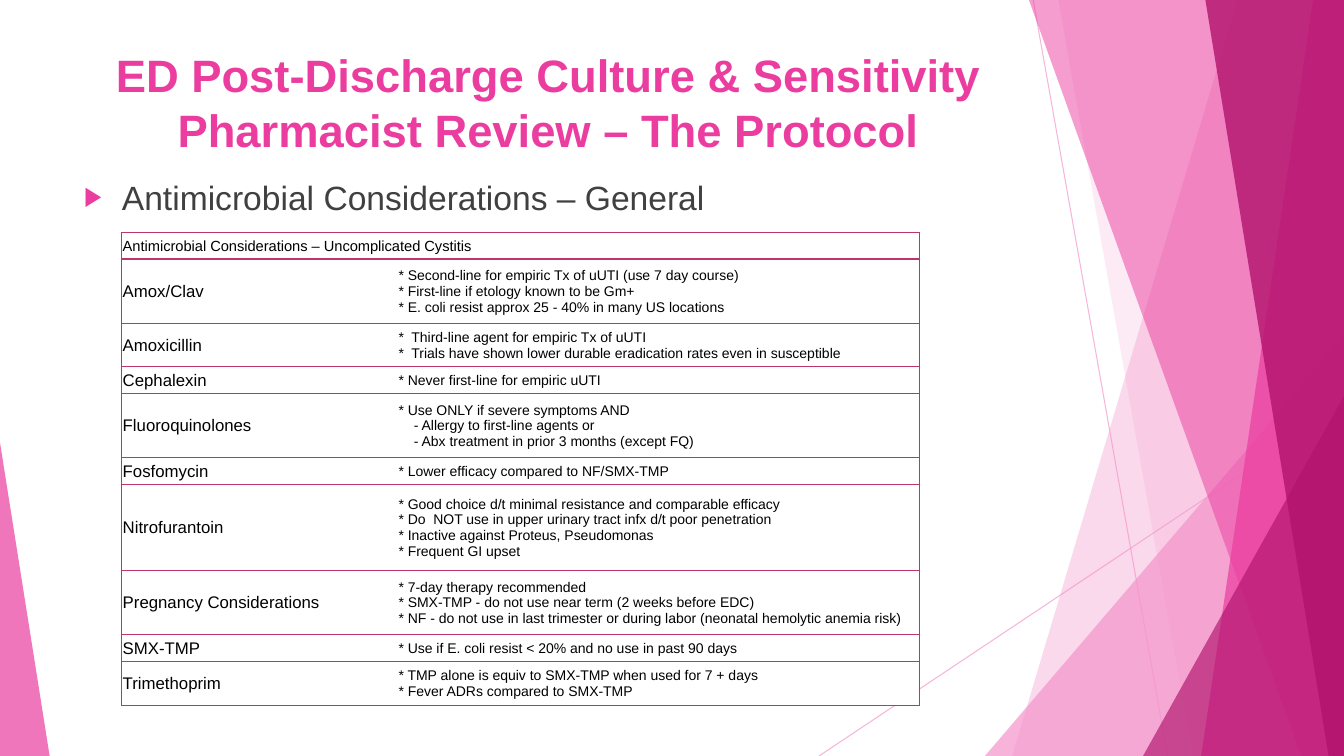
import pptx
import pptx.dml.color
import pptx.enum.shapes
import pptx.enum.text
import pptx.oxml
import pptx.oxml.ns
import pptx.util
import lxml.etree

Pt = pptx.util.Pt
qn = pptx.oxml.ns.qn
SubElement = lxml.etree.SubElement
SHAPE = pptx.enum.shapes.MSO_SHAPE
ANCHOR = pptx.enum.text.MSO_ANCHOR
WIDTH, HEIGHT = 960, 540
PINK, LIGHT, DEEP, RULE = "EB3D9F", "F496CB", "B2136D", "BC356F"

TABLE_TITLE = "Antimicrobial Considerations – Uncomplicated Cystitis"
DRUGS = [
    ("Amox/Clav", 46, ["* Second-line for empiric Tx of uUTI (use 7 day course)",
                       "* First-line if etology known to be Gm+",
                       "* E. coli resist approx 25 - 40% in many US locations"]),
    ("Amoxicillin", 31, ["*  Third-line agent for empiric Tx of uUTI",
                         "*  Trials have shown lower durable eradication rates even in susceptible"]),
    ("Cephalexin", 19, ["* Never first-line for empiric uUTI"]),
    ("Fluoroquinolones", 46, ["* Use ONLY if severe symptoms AND",
                              "- Allergy to first-line agents or",
                              "- Abx treatment in prior 3 months (except FQ)"]),
    ("Fosfomycin", 19, ["* Lower efficacy compared to NF/SMX-TMP"]),
    ("Nitrofurantoin", 61.5, ["* Good choice d/t minimal resistance and comparable efficacy",
                              "* Do  NOT use in upper urinary tract infx d/t poor penetration",
                              "* Inactive against Proteus, Pseudomonas",
                              "* Frequent GI upset"]),
    ("Pregnancy Considerations", 46, ["* 7-day therapy recommended",
                                      "* SMX-TMP - do not use near term (2 weeks before EDC)",
                                      "* NF - do not use in last trimester or during labor (neonatal hemolytic anemia risk)"]),
    ("SMX-TMP", 19, ["* Use if E. coli resist < 20% and no use in past 90 days"]),
    ("Trimethoprim", 31.5, ["* TMP alone is equiv to SMX-TMP when used for 7 + days",
                            "* Fever ADRs compared to SMX-TMP"]),
]


def rgb(value):
    return pptx.dml.color.RGBColor.from_string(value)


def set_alpha(sp, percent):
    for color in sp._element.spPr.iter(qn("a:srgbClr")):
        SubElement(color, qn("a:alpha"), val=str(percent * 1000))


def add_run(p, text, size, color, bold=False):
    r = p.add_run()
    r.text = text
    r.font.name = "Arial"
    r.font.size = Pt(size)
    r.font.bold = bold
    r.font.color.rgb = rgb(color)


def paint(sp, color, percent):
    sp.shadow.inherit = False
    sp.fill.solid()
    sp.fill.fore_color.rgb = rgb(color)
    sp.line.fill.background()
    set_alpha(sp, percent)


def add_ray(s, x1, y1, x2, y2):
    sp = s.shapes.add_connector(pptx.enum.shapes.MSO_CONNECTOR.STRAIGHT,
                                Pt(x1), Pt(y1), Pt(x2), Pt(y2))
    sp.line.color.rgb = rgb(LIGHT)
    sp.line.width = Pt(0.75)
    set_alpha(sp, 70)
    SubElement(sp._element.spPr, qn("a:effectLst"))


def add_band(s, right, bottom, top_inset, bottom_inset, color, percent):
    builder = s.shapes.build_freeform(Pt(right - top_inset), 0)
    builder.add_line_segments([(Pt(right), 0), (Pt(right), Pt(bottom)),
                               (Pt(right - bottom_inset), Pt(bottom))])
    paint(builder.convert_to_shape(), color, percent)


def add_wedge(s, left, bottom, width, height, peak, color, percent):
    sp = s.shapes.add_shape(SHAPE.ISOSCELES_TRIANGLE, Pt(left), Pt(bottom - height),
                            Pt(width), Pt(height))
    sp.adjustments[0] = peak
    paint(sp, color, percent)


def add_facets(s, width, height):
    add_ray(s, width - 222, 0, width - 126, height)
    add_ray(s, width, 290, width - 375, height)
    add_band(s, width, height, 76, 237, LIGHT, 36)
    add_band(s, width, height, 204, 108, LIGHT, 20)
    add_wedge(s, width - 256.5, height, 256.5, 300, 1, LIGHT, 72)
    add_band(s, width, height, 225, 30.5, PINK, 50)
    add_band(s, width, height, 22, 102, PINK, 70)
    add_band(s, width, height, 99, 11, DEEP, 80)
    add_wedge(s, width - 143.5, height, 143.5, 257, 1, DEEP, 66)
    add_wedge(s, 0, height, 35.5, 224, 0, PINK, 70)


def place_title(s, left, top, width, height):
    sp = s.shapes.title
    sp.left, sp.top, sp.width, sp.height = Pt(left), Pt(top), Pt(width), Pt(height)
    tf = sp.text_frame
    tf.word_wrap = True
    tf.auto_size = pptx.enum.text.MSO_AUTO_SIZE.NONE
    tf.vertical_anchor = ANCHOR.TOP
    tf.margin_top = Pt(6)
    p = tf.paragraphs[0]
    p.alignment = pptx.enum.text.PP_ALIGN.CENTER
    add_run(p, "ED Post-Discharge Culture & Sensitivity Pharmacist Review – The Protocol",
            32.4, PINK, True)


def add_heading(s, left, top, width, height):
    tf = s.shapes.add_textbox(Pt(left), Pt(top), Pt(width), Pt(height)).text_frame
    tf.word_wrap = True
    p = tf.paragraphs[0]
    p.space_before = Pt(10)
    pPr = p._p.get_or_add_pPr()
    pPr.set("marL", str(Pt(27)))
    pPr.set("indent", str(Pt(-27)))
    SubElement(SubElement(pPr, qn("a:buClr")), qn("a:srgbClr"), val=PINK)
    SubElement(pPr, qn("a:buSzPct"), val="80000")
    SubElement(pPr, qn("a:buFont"), typeface="Arial")
    SubElement(pPr, qn("a:buChar"), char="▶")
    add_run(p, "Antimicrobial Considerations – General", 24, "404040")


def set_borders(cell, ruled):
    tcPr = cell._tc.get_or_add_tcPr()
    for i, side in enumerate("LRTB"):
        ln = pptx.oxml.parse_xml(
            f'<a:ln{side} xmlns:a="http://schemas.openxmlformats.org/drawingml/2006/main"/>')
        if side in ruled:
            ln.set("w", str(Pt(1)))
            SubElement(SubElement(ln, qn("a:solidFill")), qn("a:srgbClr"), val=RULE)
        else:
            ln.set("w", "0")
            SubElement(ln, qn("a:noFill"))
        tcPr.insert(i, ln)


def fill_cell(cell, lines, size, ruled):
    cell.fill.solid()
    cell.fill.fore_color.rgb = rgb("FFFFFF")
    cell.vertical_anchor = ANCHOR.MIDDLE
    cell.margin_left = cell.margin_right = cell.margin_top = Pt(0.7)
    cell.margin_bottom = 0
    set_borders(cell, ruled)
    tf = cell.text_frame
    for i, line in enumerate(lines):
        p = tf.add_paragraph() if i else tf.paragraphs[0]
        if line.startswith("-"):
            p._p.get_or_add_pPr().set("marL", str(Pt(11)))
        add_run(p, line, size, "000000")


def add_drug_table(s, left, top, width, name_width):
    heights = [19] + [height for _, height, _ in DRUGS]
    table = s.shapes.add_table(len(heights), 2, Pt(left), Pt(top),
                               Pt(width), Pt(sum(heights))).table
    table.first_row = table.horz_banding = False
    table.columns[0].width = Pt(name_width)
    table.columns[1].width = Pt(width - name_width)
    for row, height in zip(table.rows, heights):
        row.height = Pt(height)
    table.cell(0, 0).merge(table.cell(0, 1))
    fill_cell(table.cell(0, 0), [TABLE_TITLE], 10.5, "LRTB")
    set_borders(table.cell(0, 1), "RTB")
    for i, (drug, _, notes) in enumerate(DRUGS, 1):
        fill_cell(table.cell(i, 0), [drug], 12, "LTB")
        fill_cell(table.cell(i, 1), notes, 10, "RTB")


def main():
    prs = pptx.Presentation()
    prs.slide_width, prs.slide_height = Pt(WIDTH), Pt(HEIGHT)
    s = prs.slides.add_slide(prs.slide_layouts[5])
    add_facets(s, WIDTH, HEIGHT)
    place_title(s, 53, 28, 677, 94)
    add_heading(s, 53, 122.5, 748, 40)
    add_drug_table(s, 87, 166, 570, 197)
    prs.save("out.pptx")


if __name__ == "__main__":
    main()
